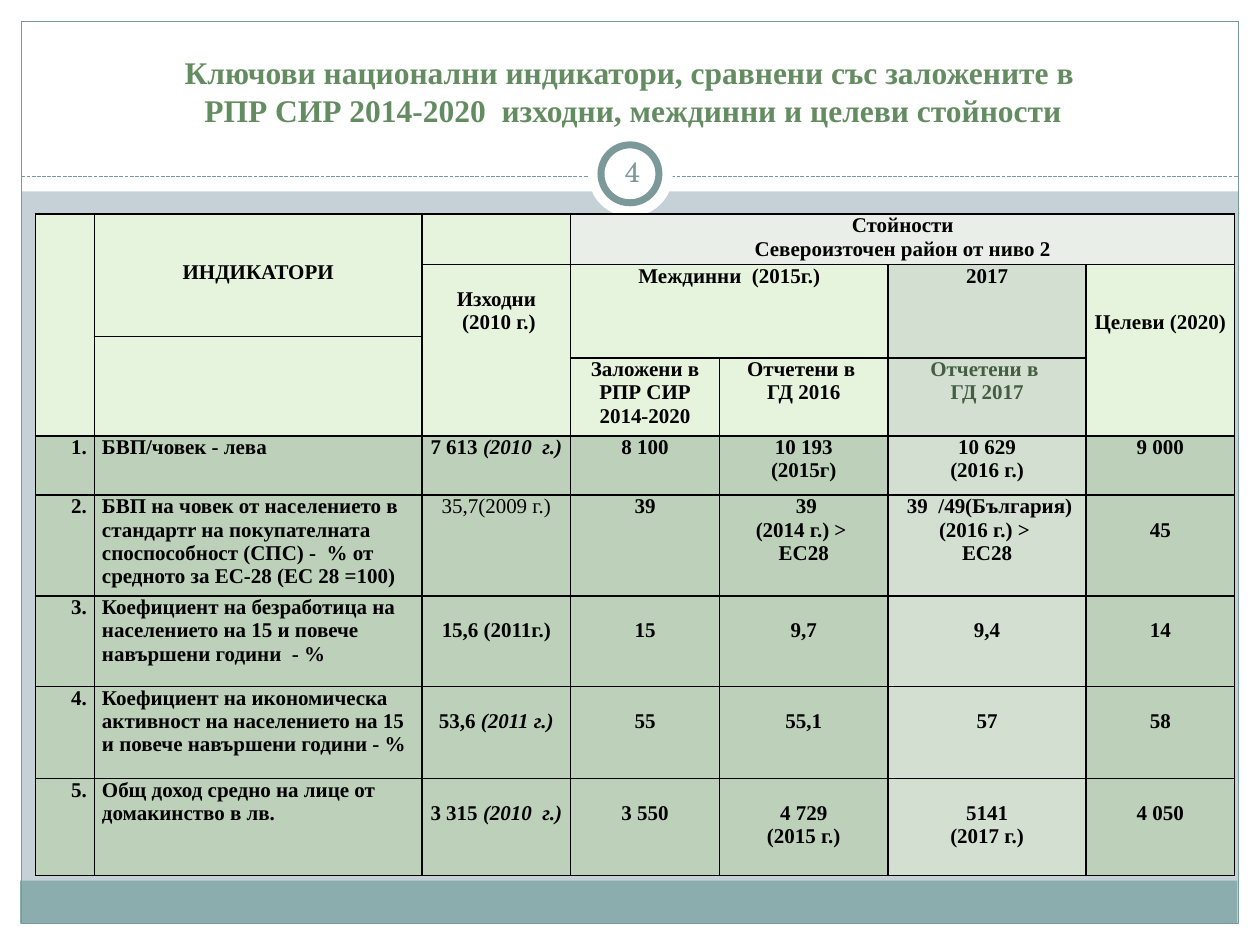
from lxml.etree import SubElement
from pptx import Presentation
from pptx.dml.color import RGBColor
from pptx.enum.dml import MSO_LINE
from pptx.enum.shapes import MSO_CONNECTOR, MSO_SHAPE
from pptx.enum.text import MSO_ANCHOR, PP_ALIGN
from pptx.oxml.ns import qn
from pptx.util import Inches, Pt

WHITE = RGBColor(0xFF, 0xFF, 0xFF)
BLACK = RGBColor(0, 0, 0)
BACKGROUND = RGBColor(0xC5, 0xD1, 0xD7)
TEAL = RGBColor(0x8C, 0xAD, 0xAE)
FRAME = RGBColor(0x7C, 0x99, 0x9A)
TITLE_GREEN = RGBColor(0x64, 0x8C, 0x61)
DARK_GREEN = RGBColor(0x43, 0x5E, 0x40)
HEADER_FILL = RGBColor(0xE7, 0xF4, 0xDD)
REGION_FILL = RGBColor(0xE9, 0xEF, 0xE8)
BODY_FILL = RGBColor(0xBC, 0xD0, 0xBA)
YEAR_FILL = RGBColor(0xD2, 0xDF, 0xD1)
SERIF = "Times New Roman"
LINE_HEIGHT = 0.185  # one 12 pt line, in inches

presentation = Presentation()
presentation.slide_width = Inches(10)
presentation.slide_height = Inches(7.5)
slide = presentation.slides.add_slide(presentation.slide_layouts[6])
slide.background.fill.solid()
slide.background.fill.fore_color.rgb = BACKGROUND


def add_panel(kind, left, top, width, height, fill, line_width=None):
    shape = slide.shapes.add_shape(
        kind, Inches(left), Inches(top), Inches(width), Inches(height))
    shape.shadow.inherit = False
    if fill is None:
        shape.fill.background()
    else:
        shape.fill.solid()
        shape.fill.fore_color.rgb = fill
    if line_width is None:
        shape.line.fill.background()
    else:
        shape.line.color.rgb = FRAME
        shape.line.width = Pt(line_width)


def write(frame, text, size, color, font=SERIF, bold=True,
          align=PP_ALIGN.CENTER):
    """One paragraph per line; the part after a bar is italic."""
    for index, line in enumerate(text.split("\n")):
        paragraph = frame.paragraphs[0] if index == 0 else frame.add_paragraph()
        paragraph.alignment = align
        paragraph.font.size = Pt(size)
        paragraph.font.name = font
        paragraph.font.bold = bold
        paragraph.font.color.rgb = color
        for part, words in enumerate(line.split("|")):
            run = paragraph.add_run()
            run.text = words
            if part:
                run.font.italic = True


# White margins, header and bottom band
for left, top, width, height, fill in [
    (0, 7.33, 10, 0.17, WHITE),
    (0, 0, 10, 1.52, WHITE),
    (0, 0, 0.17, 7.5, WHITE),
    (9.83, 0, 0.17, 7.5, WHITE),
    (0.16, 6.99, 9.66, 0.34, TEAL),
]:
    add_panel(MSO_SHAPE.RECTANGLE, left, top, width, height, fill)
add_panel(MSO_SHAPE.RECTANGLE, 0.17, 0.17, 9.66, 7.16, None, 0.75)

# Dashed divider
divider = slide.shapes.add_connector(
    MSO_CONNECTOR.STRAIGHT, Inches(0.17), Inches(1.4), Inches(9.83), Inches(1.4))
divider.line.color.rgb = FRAME
divider.line.width = Pt(0.75)
divider.line.dash_style = MSO_LINE.SQUARE_DOT
SubElement(divider._element.spPr, qn("a:effectLst"))

# Page number badge
add_panel(MSO_SHAPE.OVAL, 4.67, 1.05, 0.67, 0.67, WHITE)
add_panel(MSO_SHAPE.OVAL, 4.77, 1.15, 0.46, 0.46, WHITE, 4)

# Title and page number
for left, top, width, height, text, size, color, font, bold in [
    (0.33, 0.43, 9.33, 0.58,
     "Ключови национални индикатори, сравнени със заложените в\n"
     " РПР СИР 2014-2020  изходни, междинни и целеви стойности",
     18, TITLE_GREEN, SERIF, True),
    (4.77, 1.12, 0.5, 0.48, "4", 16, FRAME, "TeX Gyre Schola", False),
]:
    box = slide.shapes.add_textbox(
        Inches(left), Inches(top), Inches(width), Inches(height))
    frame = box.text_frame
    frame.word_wrap = True
    frame.vertical_anchor = MSO_ANCHOR.MIDDLE
    frame.margin_left = frame.margin_right = 0
    frame.margin_top = frame.margin_bottom = 0
    write(frame, text, size, color, font, bold)

# Indicator table
column_widths = [0.47, 2.6, 1.18, 1.18, 1.34, 1.57, 1.18]
row_heights = [0.37, 0.56, 0.17, 0.62, 0.47, 0.74, 0.72, 0.73, 0.77]
table = slide.shapes.add_table(
    len(row_heights), len(column_widths), Inches(0.28), Inches(1.7),
    Inches(sum(column_widths)), Inches(sum(row_heights))).table
table.first_row = False
table.horz_banding = False
for column, width in zip(table.columns, column_widths):
    column.width = Inches(width)
for table_row, height in zip(table.rows, row_heights):
    table_row.height = Inches(height)

# Header cells: row, column, text, lines skipped above the text
header = [
    (0, 1, "ИНДИКАТОРИ", 2),
    (0, 3, "Стойности\nСевероизточен район от ниво 2", 0),
    (1, 2, "Изходни\n (2010 г.)", 1),
    (1, 3, "Междинни  (2015г.)", 0),
    (1, 5, "2017", 0),
    (1, 6, "Целеви (2020)", 2),
    (3, 3, "Заложени в РПР СИР 2014-2020", 0),
    (3, 4, "Отчетени в \nГД 2016", 0),
    (3, 5, "Отчетени в \nГД 2017", 0),
]
body = [
    ["БВП/човек - лева", "7 613 |(2010  г.)", "8 100",
     "10 193\n(2015г)", "10 629\n(2016 г.)", "9 000"],
    ["БВП на човек от населението в стандартr на покупателната  "
     "споспособност (СПС) -  % от средното за ЕС-28 (ЕС 28 =100)",
     "35,7(2009 г.)", "39", " 39\n(2014 г.) > \nЕС28",
     " 39  /49(България)\n(2016 г.) > \nЕС28", "45"],
    ["Коефициент на безработица на населението на 15 и повече "
     "навършени години  - %", "15,6 (2011г.)", "15", "9,7", "9,4", "14"],
    ["Коефициент на икономическа активност на населението на 15 и повече "
     "навършени години - %", "53,6 |(2011 г.)", "55", "55,1", "57", "58"],
    ["Общ доход средно на лице от домакинство в лв.", "3 315 |(2010  г.)",
     "3 550", "4 729\n(2015 г.)", "5141\n(2017 г.)", "4 050"],
]
entries = list(header)
for number, values in enumerate(body, start=1):
    for column, text in enumerate([f"{number}."] + values):
        lowered = column > 1 and (number > 2 or (number, column) == (2, 6))
        entries.append((number + 3, column, text, int(lowered)))

# Fills and black borders for every cell
for row in range(len(row_heights)):
    for column in range(len(column_widths)):
        cell = table.cell(row, column)
        if row == 0 and column > 2:
            fill = REGION_FILL
        elif column == 5:
            fill = YEAR_FILL
        else:
            fill = HEADER_FILL if row < 4 else BODY_FILL
        properties = cell._tc.get_or_add_tcPr()
        for side in ("a:lnL", "a:lnR", "a:lnT", "a:lnB"):
            border = SubElement(properties, qn(side), w=str(Pt(1)))
            solid = SubElement(border, qn("a:solidFill"))
            SubElement(solid, qn("a:srgbClr"), val=str(BLACK))
        cell.fill.solid()
        cell.fill.fore_color.rgb = fill
        cell.margin_left = cell.margin_right = Inches(0.06)
        cell.margin_top = cell.margin_bottom = 0
        # Small type keeps empty cells from stretching their rows
        cell.text_frame.paragraphs[0].font.size = Pt(8)

# Merged cells: first row, first column, last row, last column
for top, left, bottom, right in [
    (0, 0, 3, 0), (0, 1, 1, 1), (0, 3, 0, 6), (1, 2, 3, 2),
    (1, 3, 2, 4), (1, 5, 2, 5), (1, 6, 3, 6), (2, 1, 3, 1),
]:
    table.cell(top, left).merge(table.cell(bottom, right))

# Cell text
for row, column, text, skipped in entries:
    cell = table.cell(row, column)
    cell.margin_top = Inches(skipped * LINE_HEIGHT)
    align = PP_ALIGN.CENTER
    if row > 3 and column < 2:
        align = PP_ALIGN.LEFT if column else PP_ALIGN.RIGHT
    color = DARK_GREEN if (row, column) == (3, 5) else BLACK
    write(cell.text_frame, text, 12, color,
          bold=(row, column) != (5, 2), align=align)

presentation.save("out.pptx")
